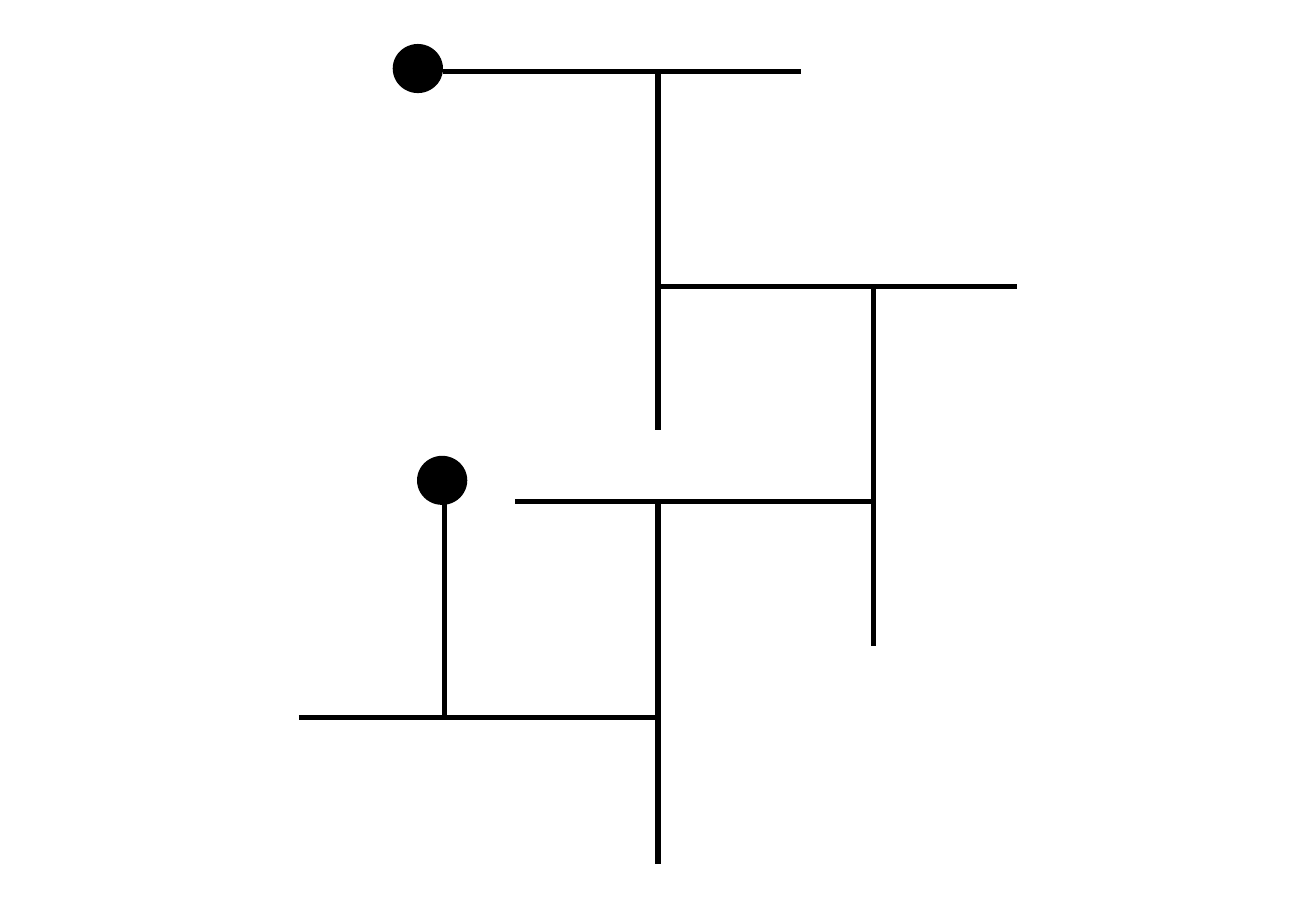
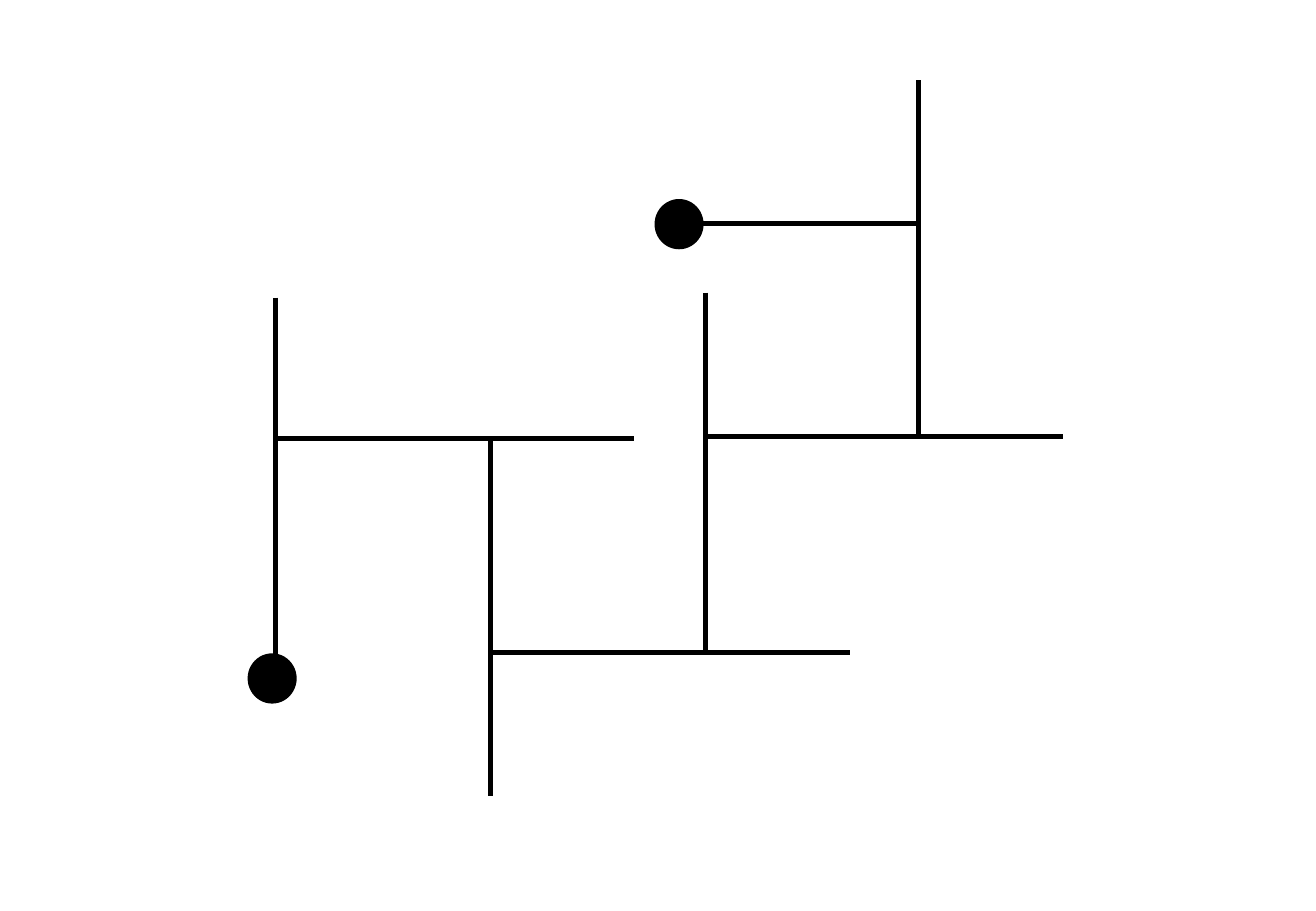
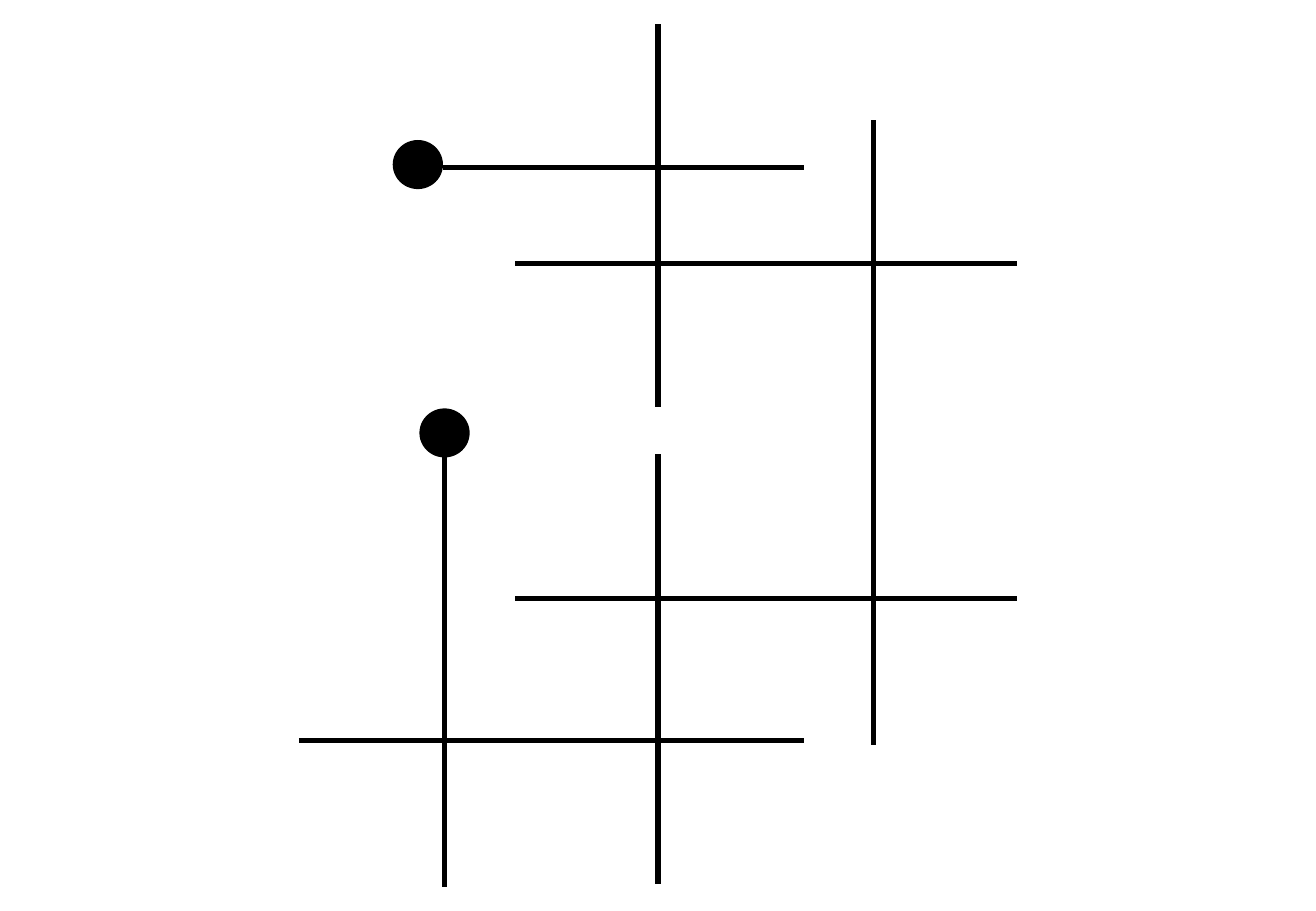
"""Draw three mazes of branching lines, each with two end dots."""
from dataclasses import dataclass
from itertools import pairwise

from lxml.etree import SubElement as Sub
from pptx import Presentation
from pptx.dml.color import RGBColor as Rgb
from pptx.enum.shapes import MSO_CONNECTOR as Link, MSO_SHAPE as Kind
from pptx.oxml.ns import qn
from pptx.shapes.group import GroupShape as Group
from pptx.util import Pt

HUES = {"ink": "000000", "page": "FFFFFF"}
INK = Rgb.from_string(HUES["ink"])
WIDE, HIGH = 780, 540
DOT_W, DOT_H = 28.8, 28.1
BLANK = 6


@dataclass(frozen=True)
class Dot:
    left: float
    top: float
    turn: int = 0


@dataclass(frozen=True)
class Row:
    y: float
    stops: tuple[float, ...]

    def points(self) -> list[tuple[float, float]]:
        return [(x, self.y) for x in self.stops]


@dataclass(frozen=True)
class Col:
    x: float
    stops: tuple[float, ...]

    def points(self) -> list[tuple[float, float]]:
        return [(self.x, y) for y in self.stops]


@dataclass(frozen=True)
class Maze:
    dots: tuple[Dot, ...]
    rails: tuple[Row | Col, ...]


SPAN = (305.3, 390, 517.7, 602.6)

MAZES = (
    Maze(
        (Dot(233.3, 26.6), Dot(247.7, 270.7)),
        (
            Row(42.5, (262.8, 390, 474.5)),
            Col(390, (42.5, 170, 255)),
            Row(170, SPAN[1:]),
            Col(517.7, (170, 297.4, 383)),
            Row(297.4, SPAN[:3]),
            Col(390, (297.4, 425.5, 512)),
            Row(425.5, (177.1, 263.5, 391.5)),
            Col(263.5, (298.8, 427)),
        ),
    ),
    Maze(
        (Dot(146.9, 388.1, 270), Dot(388.1, 118.8, 270)),
        (
            Col(163.4, (176.4, 260.6, 388.1)),
            Row(260, (163.4, 290.9, 375.8)),
            Col(290.9, (259.5, 386.6, 471.6)),
            Row(386.6, (290.9, 418.3, 504)),
            Col(418.3, (173.5, 259, 388)),
            Row(258.5, (417, 545, 630)),
            Col(544.3, (47.5, 132.5, 260)),
            Row(132.5, (416.2, 544.3)),
        ),
    ),
    Maze(
        (Dot(233.3, 83.5), Dot(249.1, 242.6)),
        (
            Row(99.4, (262.8, 390, 476.6)),
            Col(390, (14.4, 99.4, 156.2, 241.2)),
            Row(156.2, SPAN),
            Col(517.7, (71.3, 156.2, 355, 441.4)),
            Row(355, SPAN),
            Col(390, (269.3, 354.2, 439.2, 524.2)),
            Row(439.2, (177.1, 263.5, 391.5, 476.6)),
            Col(263.5, (270.7, 440.6, 525.6)),
        ),
    ),
)


def add_dot(group: Group, dot: Dot) -> None:
    disc = group.shapes.add_shape(
        Kind.FLOWCHART_CONNECTOR, Pt(dot.left), Pt(dot.top), Pt(DOT_W), Pt(DOT_H)
    )
    disc.rotation = dot.turn
    disc.shadow.inherit = False
    disc.fill.solid()
    disc.fill.fore_color.rgb = INK
    disc.line.color.rgb = INK
    disc.line.width = Pt(1)


def add_rail(group: Group, rail: Row | Col) -> None:
    for (x1, y1), (x2, y2) in pairwise(rail.points()):
        line = group.shapes.add_connector(
            Link.STRAIGHT, Pt(x1), Pt(y1), Pt(x2), Pt(y2)
        )
        line.line.color.rgb = INK
        line.line.width = Pt(3)
        Sub(line._element.spPr, qn("a:effectLst"))


def main() -> None:
    deck = Presentation()
    deck.slide_width, deck.slide_height = Pt(WIDE), Pt(HIGH)
    back = deck.slide_master.background.fill
    back.solid()
    back.fore_color.rgb = Rgb.from_string(HUES["page"])
    for maze in MAZES:
        slide = deck.slides.add_slide(deck.slide_layouts[BLANK])
        group = slide.shapes.add_group_shape()
        for dot in maze.dots:
            add_dot(group, dot)
        for rail in maze.rails:
            add_rail(group, rail)
    deck.save("out.pptx")


if __name__ == "__main__":
    main()
